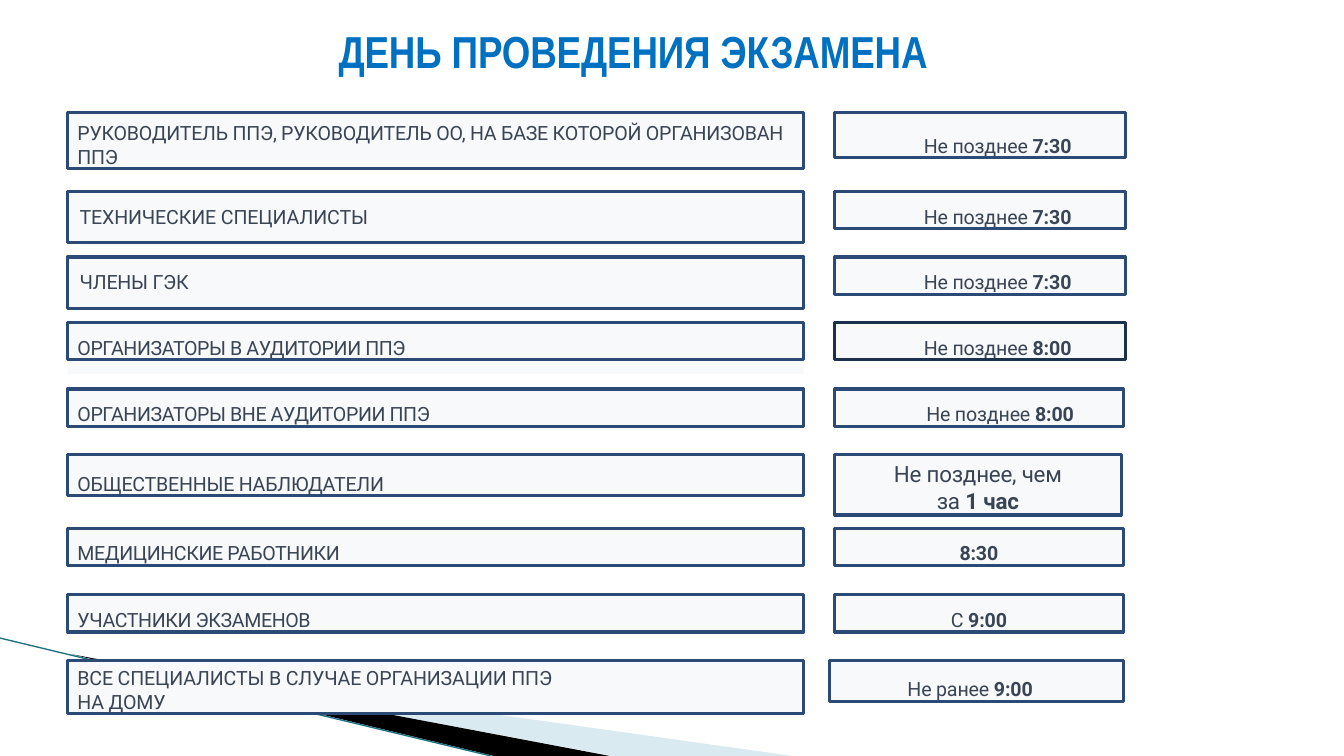
from lxml import etree
from pptx import Presentation
from pptx.dml.color import RGBColor
from pptx.enum.shapes import MSO_CONNECTOR, MSO_SHAPE
from pptx.enum.text import MSO_ANCHOR, PP_ALIGN
from pptx.oxml.ns import qn
from pptx.util import Inches, Pt

LEFT, CENTER = PP_ALIGN.LEFT, PP_ALIGN.CENTER
TOP, MIDDLE = MSO_ANCHOR.TOP, MSO_ANCHOR.MIDDLE
RECTANGLE, STRAIGHT = MSO_SHAPE.RECTANGLE, MSO_CONNECTOR.STRAIGHT

COLORS = {
    "title": "0070C0", "text": "394454", "box": "F8F9FA", "border": "2B4A76",
    "dark border": "1C314E", "pale wedge": "A0CBDC", "dark wedge": "000000",
    "edge": "1F7080",
}
SLIDE_WIDTH, SLIDE_HEIGHT = 13.33, 7.5
ROLE_LEFT, ROLE_WIDTH = 0.67, 7.3
TIME_LEFT = 8.28
LATEST = "Не позднее "

# Row top; role: text, height, left and top inset, letter spacing;
# time: plain text, bold text, width, height, left and top inset
ROWS = [
    (1.12, ("РУКОВОДИТЕЛЬ ППЭ, РУКОВОДИТЕЛЬ ОО, НА БАЗЕ КОТОРОЙ ОРГАНИЗОВАН ППЭ",
            0.55, 0.1, 0.08, -0.2), (LATEST, "7:30", 2.88, 0.44, 0.35, 0.21)),
    (1.9, ("ТЕХНИЧЕСКИЕ СПЕЦИАЛИСТЫ", 0.51, 0.12, 0.13, -0.1),
     (LATEST, "7:30", 2.88, 0.37, 0.35, 0.13)),
    (2.55, ("ЧЛЕНЫ ГЭК", 0.51, 0.12, 0.13, -0.2),
     (LATEST, "7:30", 2.88, 0.37, 0.35, 0.13)),
    (3.2, ("ОРГАНИЗАТОРЫ В АУДИТОРИИ ППЭ", 0.37, 0.1, 0.13, -0.3),
     (LATEST, "8:00", 2.88, 0.37, 0.35, 0.13)),
    (3.86, ("ОРГАНИЗАТОРЫ ВНЕ АУДИТОРИИ ППЭ", 0.37, 0.1, 0.13, -0.3),
     (LATEST, "8:00", 2.86, 0.37, 0.42, 0.13)),
    (4.51, ("ОБЩЕСТВЕННЫЕ НАБЛЮДАТЕЛИ", 0.41, 0.1, 0.17, -0.2),
     ("Не позднее, чем\vза ", "1 час", 2.84, 0.6, 0, 0.06)),
    (5.24, ("МЕДИЦИНСКИЕ РАБОТНИКИ", 0.37, 0.1, 0.13, -0.3),
     ("", "8:30", 2.86, 0.37, 0, 0.13)),
    (5.9, ("УЧАСТНИКИ ЭКЗАМЕНОВ", 0.37, 0.1, 0.13, -0.3),
     ("С ", "9:00", 2.86, 0.37, 0, 0.13)),
    (6.55, ("ВСЕ СПЕЦИАЛИСТЫ В СЛУЧАЕ ОРГАНИЗАЦИИ ППЭ\nНА ДОМУ",
            0.53, 0.1, 0.06, -0.15), ("Не ранее ", "9:00", 2.91, 0.41, 0.77, 0.17)),
]
SHADED_ROW, OBSERVER_ROW, HOME_ROW = 3, 5, 8


def color(name):
    return RGBColor.from_string(COLORS[name])


def style_run(run, size, name, font="Roboto", bold=False, spacing=0.0):
    run.font.name, run.font.size, run.font.bold = font, Pt(size), bold
    run.font.color.rgb = color(name)
    run._r.get_or_add_rPr().set("spc", str(round(spacing * 100)))


def set_frame(text_frame, left=0.0, top=0.0, anchor=TOP):
    text_frame.word_wrap = True
    text_frame.vertical_anchor = anchor
    text_frame.margin_left, text_frame.margin_top = Inches(left), Inches(top)
    text_frame.margin_right = text_frame.margin_bottom = 0


def add_box(slide, left, top, width, height, border="border"):
    shape = slide.shapes.add_shape(
        RECTANGLE, Inches(left), Inches(top), Inches(width), Inches(height))
    shape.shadow.inherit = False
    shape.fill.solid()
    shape.fill.fore_color.rgb = color("box")
    if border:
        shape.line.color.rgb = color(border)
        shape.line.width = Pt(2.25)
    else:
        shape.line.fill.background()
    return shape


def add_wedge(slide, points, name, opacity=100):
    points = [(Inches(x), Inches(y)) for x, y in points]
    builder = slide.shapes.build_freeform(*points[0])
    builder.add_line_segments(points[1:])
    shape = builder.convert_to_shape()
    shape.shadow.inherit = False
    shape.fill.solid()
    shape.fill.fore_color.rgb = color(name)
    shape.line.fill.background()
    if opacity < 100:
        rgb = shape._element.spPr.find(qn("a:solidFill"))[0]
        etree.SubElement(rgb, qn("a:alpha")).set("val", str(opacity * 1000))


def add_corner(slide, bottom):
    """Wedges and thin edge rising from the bottom of the slide."""
    add_wedge(slide, [(0.73, 6.5), (7.86, bottom), (6.08, bottom)], "pale wedge", 40)
    add_wedge(slide, [(0.71, 6.49), (6.05, bottom), (4.9, bottom)], "dark wedge")
    edge = slide.shapes.add_connector(
        STRAIGHT, 0, Inches(6.33), Inches(4.87), Inches(bottom))
    edge.line.color.rgb = color("edge")
    edge.line.width = Pt(0.95)
    etree.SubElement(edge._element.spPr, qn("a:effectLst"))


def add_title(slide, left, top, width, height):
    shape = slide.shapes.add_textbox(
        Inches(left), Inches(top), Inches(width), Inches(height))
    set_frame(shape.text_frame, anchor=MIDDLE)
    paragraph = shape.text_frame.paragraphs[0]
    paragraph.text = "ДЕНЬ ПРОВЕДЕНИЯ ЭКЗАМЕНА"
    paragraph.alignment = CENTER
    style_run(paragraph.runs[0], 32, "title", "Arial Narrow", True, -0.1)


def add_role(slide, left, top, width, role):
    text, height, inset_left, inset_top, spacing = role
    text_frame = add_box(slide, left, top, width, height).text_frame
    set_frame(text_frame, inset_left, inset_top)
    text_frame.text = text
    for paragraph in text_frame.paragraphs:
        paragraph.alignment = LEFT
        style_run(paragraph.runs[0], 14, "text", spacing=spacing)


def add_time(slide, left, top, time, size=14, alignment=CENTER, border="border"):
    plain, strong, width, height, inset_left, inset_top = time
    text_frame = add_box(slide, left, top, width, height, border).text_frame
    set_frame(text_frame, inset_left, inset_top)
    paragraph = text_frame.paragraphs[0]
    paragraph.text = plain
    paragraph.alignment = alignment
    for run in paragraph.runs:
        style_run(run, size, "text", spacing=-0.15)
    run = paragraph.add_run()
    run.text = strong
    style_run(run, size, "text", bold=True, spacing=-0.1)


def add_schedule(slide):
    for index, (top, role, time) in enumerate(ROWS):
        if index == SHADED_ROW:
            add_box(slide, ROLE_LEFT, top, ROLE_WIDTH, 0.51, border=None)
        add_role(slide, ROLE_LEFT, top, ROLE_WIDTH, role)
        add_time(
            slide, TIME_LEFT - (0.05 if index == HOME_ROW else 0), top, time,
            size=16 if index == OBSERVER_ROW else 14,
            alignment=LEFT if index == HOME_ROW else CENTER,
            border="dark border" if index == SHADED_ROW else "border")


def main():
    presentation = Presentation()
    presentation.slide_width = Inches(SLIDE_WIDTH)
    presentation.slide_height = Inches(SLIDE_HEIGHT)
    slide = presentation.slides.add_slide(presentation.slide_layouts[6])
    add_corner(slide, SLIDE_HEIGHT)
    add_title(slide, 0.53, 0.23, 11.5, 0.55)
    add_schedule(slide)
    presentation.save("out.pptx")


if __name__ == "__main__":
    main()
